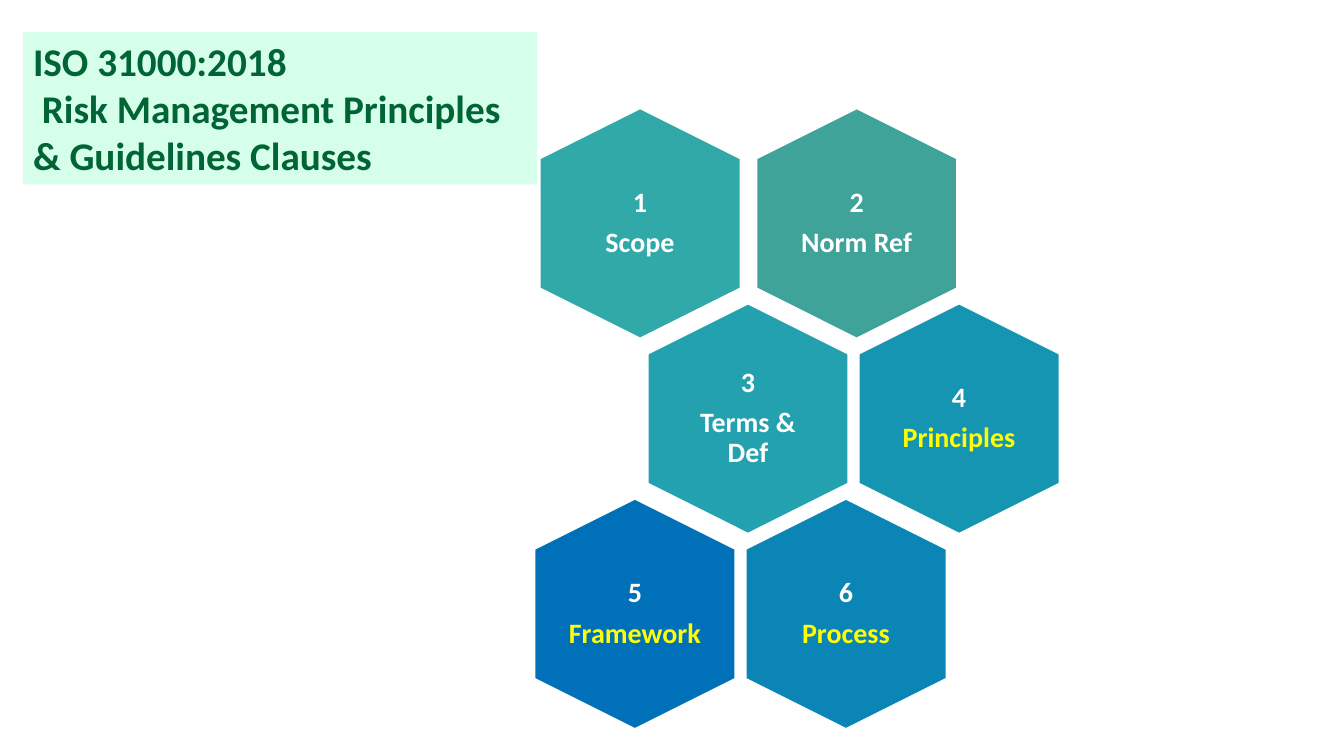
from dataclasses import dataclass

from pptx import Presentation
from pptx.dml.color import RGBColor
from pptx.enum.shapes import MSO_SHAPE
from pptx.enum.text import MSO_ANCHOR, MSO_AUTO_SIZE, PP_ALIGN
from pptx.util import Cm, Pt


@dataclass(frozen=True)
class Theme:
    font: str = "Calibri"
    title_size: int = 28
    clause_size: int = 20
    title_fill: str = "D6FFEB"
    title_text: str = "006434"
    white: str = "FFFFFF"
    highlight: str = "FFFF00"


class ClauseSlide:
    HEX_LENGTH, HEX_WIDTH = 5.79, 5.05
    LABEL_WIDTH, LABEL_HEIGHT = 3.48, 3.98

    def __init__(self, slide, theme):
        self.slide = slide
        self.theme = theme

    def style(self, paragraph, size, color):
        paragraph.font.name = self.theme.font
        paragraph.font.size = Pt(size)
        paragraph.font.bold = True
        paragraph.font.color.rgb = RGBColor.from_string(color)

    def title(self, lines, left, top, width, height):
        title = self.slide.shapes.title
        title.left, title.top = Cm(left), Cm(top)
        title.width, title.height = Cm(width), Cm(height)
        title.fill.solid()
        title.fill.fore_color.rgb = RGBColor.from_string(self.theme.title_fill)
        frame = title.text_frame
        frame.auto_size = MSO_AUTO_SIZE.NONE
        frame.vertical_anchor = MSO_ANCHOR.TOP
        frame.text = "\n".join(lines)
        for paragraph in frame.paragraphs:
            paragraph.alignment = PP_ALIGN.LEFT
            self.style(paragraph, self.theme.title_size, self.theme.title_text)

    def hexagon(self, center_x, center_y, fill):
        hexagon = self.slide.shapes.add_shape(
            MSO_SHAPE.HEXAGON,
            Cm(center_x - self.HEX_LENGTH / 2), Cm(center_y - self.HEX_WIDTH / 2),
            Cm(self.HEX_LENGTH), Cm(self.HEX_WIDTH))
        hexagon.rotation = 90
        hexagon.adjustments[0] = 0.25
        hexagon.shadow.inherit = False
        hexagon.fill.solid()
        hexagon.fill.fore_color.rgb = RGBColor.from_string(fill)
        hexagon.line.color.rgb = RGBColor.from_string(self.theme.white)
        hexagon.line.width = Pt(1)

    def label(self, center_x, center_y, number, name, name_color):
        label = self.slide.shapes.add_textbox(
            Cm(center_x - self.LABEL_WIDTH / 2), Cm(center_y - self.LABEL_HEIGHT / 2),
            Cm(self.LABEL_WIDTH), Cm(self.LABEL_HEIGHT))
        frame = label.text_frame
        frame.word_wrap = True
        frame.vertical_anchor = MSO_ANCHOR.MIDDLE
        frame.margin_left = frame.margin_right = 0
        frame.margin_top = frame.margin_bottom = 0
        frame.text = f"{number}\n{name}"
        for paragraph, color in zip(frame.paragraphs, (self.theme.white, name_color)):
            paragraph.alignment = PP_ALIGN.CENTER
            paragraph.line_spacing = 0.9
            paragraph.space_after = Pt(7)
            self.style(paragraph, self.theme.clause_size, color)


def main():
    theme = Theme()
    presentation = Presentation()
    presentation.slide_width, presentation.slide_height = Cm(33.87), Cm(19.05)
    title_only = presentation.slide_layouts[5]
    page = ClauseSlide(presentation.slides.add_slide(title_only), theme)

    # Heading
    page.title(["ISO 31000:2018", " Risk Management Principles & Guidelines Clauses"],
               0.58, 0.81, 12.95, 3.84)

    # Honeycomb rows: first centre, pitch, clauses (name, fill, name colour)
    rows = [
        (16.13, 5.46, [("Scope", "31A9A9", theme.white),
                       ("Norm Ref", "3FA399", theme.white)]),
        (18.85, 5.32, [("Terms & Def", "23A1AF", theme.white),
                       ("Principles", "1695B3", theme.highlight)]),
        (16.0, 5.32, [("Framework", "0071B9", theme.highlight),
                      ("Process", "0B84B6", theme.highlight)]),
    ]
    first_row_y, row_pitch = 5.63, 4.92
    number = 1
    for row, (first_x, pitch, clauses) in enumerate(rows):
        center_y = first_row_y + row * row_pitch
        for column, (name, fill, name_color) in enumerate(clauses):
            center_x = first_x + column * pitch
            page.hexagon(center_x, center_y, fill)
            page.label(center_x, center_y, number, name, name_color)
            number += 1

    presentation.save("out.pptx")


if __name__ == "__main__":
    main()
